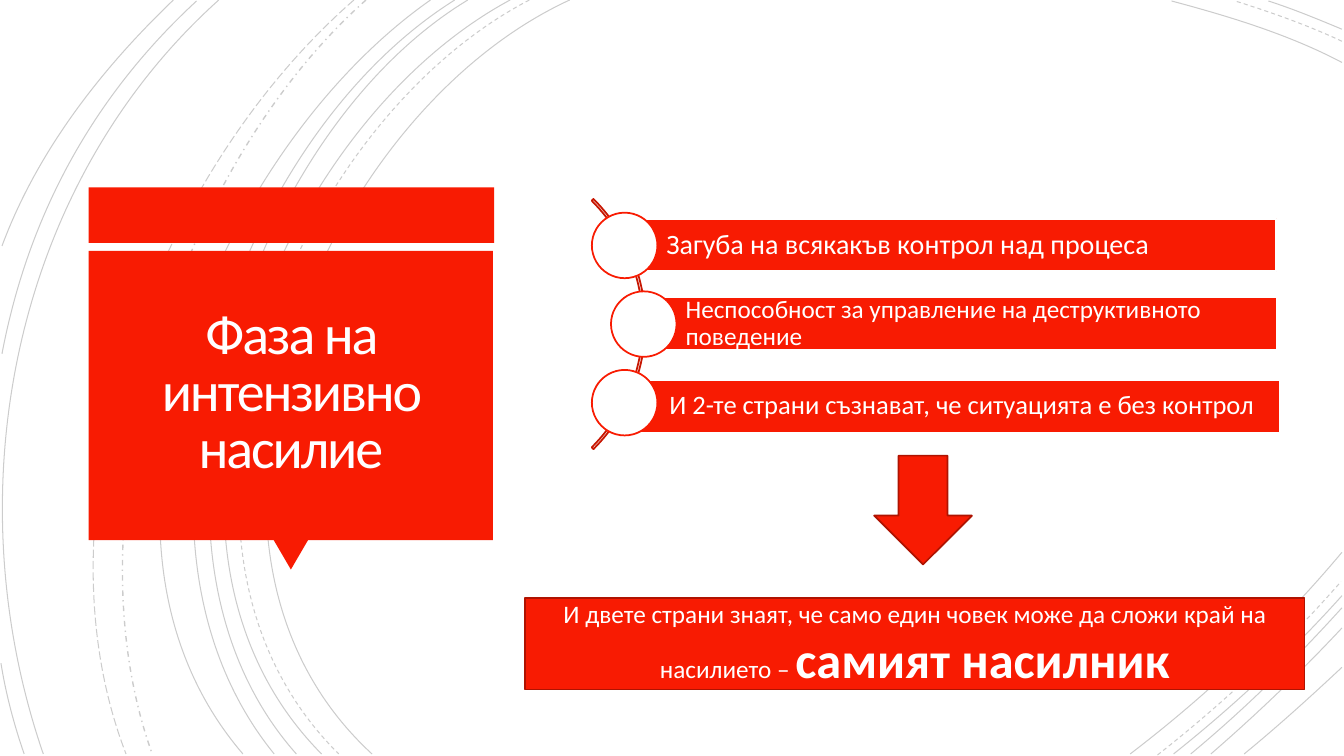
from typing import NamedTuple, Optional

from lxml import etree
from pptx import Presentation
from pptx import util as u
from pptx.dml.color import RGBColor
from pptx.enum import dml, shapes, text
from pptx.oxml.ns import qn

RED = RGBColor(0xF8, 0x1B, 0x02)
DARK = RGBColor(0xAF, 0x13, 0x01)
ARC = RGBColor(0xC7, 0x16, 0x02)
WHITE = RGBColor(0xFF, 0xFF, 0xFF)
CREAM = RGBColor(0xFF, 0xFE, 0xFF)
BLACK = RGBColor(0, 0, 0)
FONT = "Calibri"
KIND = shapes.MSO_SHAPE
DASH = dml.MSO_LINE
MID = text.MSO_ANCHOR.MIDDLE

# The slide is a grid of 13.33 columns by 7.5 rows.
WIDE, HIGH = u.Inches(13.33), u.Inches(7.5)
COL, ROW = WIDE / 13.33, HIGH / 7.5


class Box(NamedTuple):
    x: float
    y: float
    w: float
    h: float

    def emu(self) -> tuple:
        return (round(self.x * COL), round(self.y * ROW),
                round(self.w * COL), round(self.h * ROW))


class Curve(NamedTuple):
    """A cubic curve: start, two handles and end, as x, y pairs."""
    pts: tuple
    dash: Optional[DASH] = None
    width: float = 0.75


class Item(NamedTuple):
    words: str
    size: int
    disc: float
    bar: Box


CURVES = [
    Curve((5.65, 0, 3.15, 1.15, 1.43, 5.4, 3.69, 7.48)),
    Curve((13.31, 0.62, 12.78, 0.34, 12.18, 0.16, 11.62, 0.01)),
    Curve((11.21, 7.48, 11.97, 6.9, 12.69, 6.22, 13.31, 5.48)),
    Curve((5.25, 0, 2.85, 1.25, 1.23, 5.37, 3.36, 7.48), DASH.DASH),
    Curve((13.31, 0.41, 12.97, 0.25, 12.6, 0.12, 12.25, 0.01), DASH.DASH),
    Curve((11.48, 7.49, 12.13, 6.98, 12.75, 6.4, 13.3, 5.77), DASH.DASH),
    Curve((5.06, 0, 2.7, 1.27, 1.1, 5.37, 3.19, 7.48)),
    Curve((13.31, 0.29, 13.07, 0.19, 12.83, 0.09, 12.58, 0.01)),
    Curve((11.64, 7.48, 12.23, 7.01, 12.8, 6.48, 13.31, 5.91)),
    Curve((4.64, 0, 2.44, 1.33, 1.1, 5.41, 2.94, 7.48)),
    Curve((11.81, 7.48, 12.34, 7.04, 12.84, 6.55, 13.31, 6.03)),
    Curve((4.51, 0, 2.31, 1.38, 0.97, 5.33, 2.72, 7.48)),
    Curve((12.01, 7.48, 12.46, 7.09, 12.9, 6.67, 13.31, 6.23)),
    Curve((4.27, 0, 2.17, 1.47, 0.53, 5.29, 2.41, 7.48)),
    Curve((12.34, 7.48, 12.67, 7.21, 12.99, 6.92, 13.31, 6.62)),
    Curve((3.63, 0, 1.76, 1.66, 0.65, 5.09, 1.51, 7.48), DASH.DASH_DOT, 1),
    Curve((3.51, 0, 1.57, 1.69, 0.29, 4.99, 1.25, 7.48), DASH.LONG_DASH),
    Curve((2.17, 0, 0.11, 1.85, -0.46, 4.9, 0.43, 7.48)),
    Curve((1.95, 0.01, 0.92, 0.96, 0.28, 2.14, 0.02, 3.51)),
    Curve((0.01, 6.58, 0.06, 6.89, 0.14, 7.19, 0.24, 7.48)),
    Curve((1.72, 0, 1, 0.69, 0.37, 1.5, 0.02, 2.44)),
]
ITEMS = [
    Item("Загуба на всякакъв контрол над процеса", 20, 5.87,
         Box(6.2, 2.17, 6.46, 0.52)),
    Item("Неспособност за управление на деструктивното поведение", 18, 6.06,
         Box(6.39, 2.95, 6.27, 0.52)),
    Item("И 2-те страни съзнават, че ситуацията е без контрол", 19, 5.87,
         Box(6.23, 3.77, 6.46, 0.52)),
]
DISC, TOP, GAP = 0.65, 2.11, 0.78


def bend(shape) -> None:
    """Turn the three straight segments of a freeform into one cubic curve."""
    route = shape._element.spPr.find(".//" + qn("a:path"))
    curve = etree.Element(qn("a:cubicBezTo"))
    for leg in route.findall(qn("a:lnTo")):
        curve.append(leg[0])
        route.remove(leg)
    route.append(curve)


def add_curve(slide, curve: Curve) -> None:
    first, *rest = [(round(x * COL), round(y * ROW))
                    for x, y in zip(curve.pts[::2], curve.pts[1::2])]
    pen = slide.shapes.build_freeform(*first)
    pen.add_line_segments(rest, close=False)
    shape = pen.convert_to_shape()
    bend(shape)
    shape.shadow.inherit = False
    shape.fill.background()
    line = shape.line
    line.color.rgb = BLACK
    line.width = u.Pt(curve.width)
    if curve.dash:
        line.dash_style = curve.dash
    tint = shape._element.spPr.find(".//" + qn("a:ln")).find(".//" + qn("a:srgbClr"))
    etree.SubElement(tint, qn("a:alpha")).set("val", "20000")


def add_shape(slide, kind: KIND, box: Box, fill: Optional[RGBColor] = RED,
              edge: Optional[RGBColor] = None):
    shape = slide.shapes.add_shape(kind, *box.emu())
    shape.shadow.inherit = False
    if fill is None:
        shape.fill.background()
    else:
        shape.fill.solid()
        shape.fill.fore_color.rgb = fill
    if edge is None:
        shape.line.fill.background()
    else:
        shape.line.color.rgb = edge
        shape.line.width = u.Pt(1.25)
    return shape


def style(run, size: int, color: RGBColor = WHITE, bold: bool = False) -> None:
    font = run.font
    font.name, font.size, font.bold = FONT, u.Pt(size), bold
    font.color.rgb = color


def inset(frame, left: float, rest: float) -> None:
    frame.margin_left = round(left * COL)
    frame.margin_right = round(rest * COL)
    frame.margin_top = frame.margin_bottom = round(rest * ROW)


def add_title(slide) -> None:
    add_shape(slide, KIND.RECTANGLE, Box(0.88, 1.86, 4.02, 0.55))
    tip = add_shape(slide, KIND.ISOSCELES_TRIANGLE, Box(2.71, 5.35, 0.35, 0.3))
    tip.rotation = 180
    add_shape(slide, KIND.RECTANGLE, Box(0.88, 2.49, 4.01, 2.87))

    title = slide.shapes.title
    title.left, title.top, title.width, title.height = Box(0.97, 2.56, 3.83, 2.7).emu()
    frame = title.text_frame
    frame.text = "Фаза на интензивно насилие"
    frame.word_wrap = True
    frame.auto_size = text.MSO_AUTO_SIZE.NONE
    frame.vertical_anchor = MID
    inset(frame, 0.1, 0.1)
    para = frame.paragraphs[0]
    para.alignment, para.line_spacing = text.PP_ALIGN.CENTER, 0.85
    run = para.runs[0]
    style(run, 40, CREAM)
    run.font._element.set("spc", "-150")
    # Bring the title in front of its panel.
    title._element.getparent().append(title._element)


def add_item(slide, item: Item, row: int) -> None:
    bar = add_shape(slide, KIND.RECTANGLE, item.bar, RED, WHITE)
    frame = bar.text_frame
    frame.text = item.words
    frame.word_wrap = True
    frame.vertical_anchor = MID
    inset(frame, 0.41, 0.05)
    para = frame.paragraphs[0]
    para.alignment, para.line_spacing = text.PP_ALIGN.LEFT, 0.9
    style(para.runs[0], item.size)
    add_shape(slide, KIND.OVAL, Box(item.disc, TOP + row * GAP, DISC, DISC), WHITE, RED)


def add_close(slide) -> None:
    add_shape(slide, KIND.DOWN_ARROW, Box(8.67, 4.52, 0.97, 1.08), RED, DARK)
    panel = add_shape(slide, KIND.RECTANGLE, Box(5.21, 5.93, 7.73, 0.91), RED, DARK)
    frame = panel.text_frame
    frame.word_wrap = True
    frame.vertical_anchor = MID
    para = frame.paragraphs[0]
    para.text = "И двете страни знаят, че само един човек може да сложи край на насилието – "
    para.alignment = text.PP_ALIGN.CENTER
    style(para.runs[0], 18)
    key = para.add_run()
    key.text = "самият насилник"
    style(key, 36, bold=True)


def main() -> None:
    deck = Presentation()
    deck.slide_width, deck.slide_height = WIDE, HIGH
    slide = deck.slides.add_slide(deck.slide_layouts[5])
    for curve in CURVES:
        add_curve(slide, curve)
    add_title(slide)
    arc = add_shape(slide, KIND.BLOCK_ARC, Box(2.89, 1.46, 3.51, 3.51), None, ARC)
    for i, size in enumerate((189, 27, 0.007)):
        arc.adjustments[i] = size
    for row, item in enumerate(ITEMS):
        add_item(slide, item, row)
    add_close(slide)
    deck.save("out.pptx")


if __name__ == "__main__":
    main()
